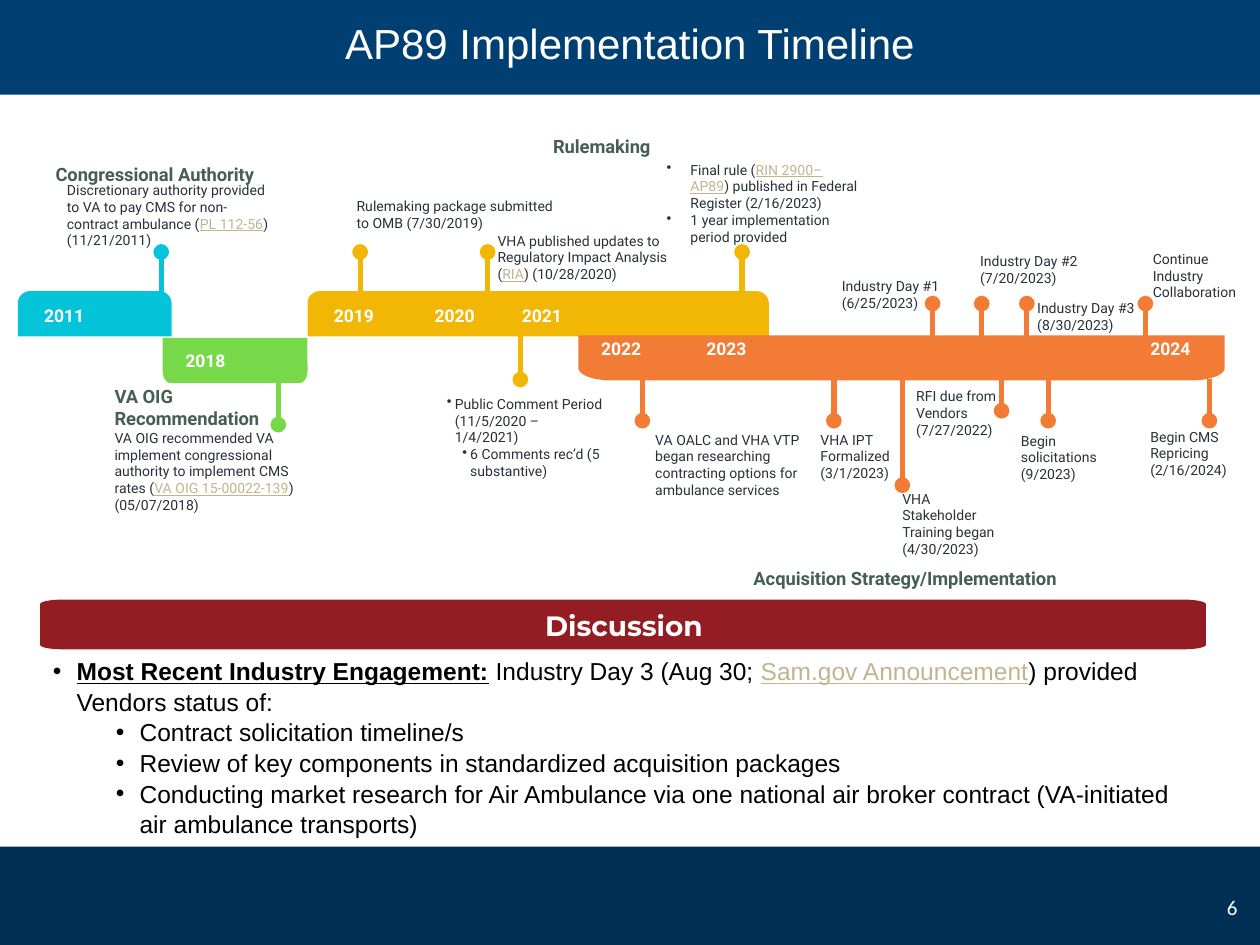
import math

from lxml import etree
from pptx import Presentation
from pptx.dml.color import RGBColor
from pptx.enum.shapes import MSO_CONNECTOR, MSO_SHAPE
from pptx.enum.text import MSO_ANCHOR, MSO_AUTO_SIZE, PP_ALIGN
from pptx.oxml.ns import qn
from pptx.util import Cm, Pt

LINE = MSO_CONNECTOR.STRAIGHT
RECT = MSO_SHAPE.RECTANGLE
ROUND = MSO_SHAPE.ROUND_2_SAME_RECTANGLE
MIDDLE = MSO_ANCHOR.MIDDLE
TOP = MSO_ANCHOR.TOP
GROW = MSO_AUTO_SIZE.SHAPE_TO_FIT_TEXT
FIXED = MSO_AUTO_SIZE.NONE
LEFT, CENTER, RIGHT = PP_ALIGN.LEFT, PP_ALIGN.CENTER, PP_ALIGN.RIGHT

WHITE, INK, PINE, LINK = "FFFFFF", "263238", "455F51", "C2B48F"
CYAN, GREEN, GOLD, ORANGE = "04C4D9", "77D94A", "F2B705", "F27B35"

NOTE = {"name": "Roboto", "size": Pt(8)}
HEAD = {"name": "Roboto", "size": Pt(10.5), "bold": True}
YEAR = {"name": "Roboto", "size": Pt(10), "bold": True}
BANNER = {"name": "Montserrat", "size": Pt(16), "bold": True}
TITLE = {"name": "Arial", "size": Pt(24)}
BODY = {"name": "Arial", "size": Pt(14)}
PAGE = {"name": "Calibri", "size": Pt(12)}

SLIM = {"margin_left": Cm(0.23), "margin_right": Cm(0.23),
        "margin_top": Cm(0.1), "margin_bottom": Cm(0.1)}
INSET = {"margin_left": Cm(0.46), "margin_right": Cm(0.25),
         "margin_top": Cm(0.13), "margin_bottom": Cm(0.13),
         "vertical_anchor": MIDDLE, "word_wrap": True}

PINS = [
    (CYAN, 5.92, 5.08, [3.25]),
    (GREEN, 7.72, 8.56, [5.61]),
    (GOLD, 5.92, 5.08, [7.26, 9.83, 14.96]),
    (GOLD, 6.76, 7.65, [10.49]),
    (ORANGE, 6.81, 6.12, [18.8, 19.79, 20.7, 23.09]),
    (ORANGE, 7.64, 8.48, [12.95, 16.81, 21.13, 24.38]),
    (ORANGE, 7.44, 8.28, [20.19]),
    (ORANGE, 7.62, 9.78, [18.19]),
]

HEADS = [
    ((0.89, 2.97, 4.62, 0.66), "Congressional Authority", 1.5),
    ((10.92, 2.41, 4.62, 0.66), "Rulemaking", 1.5),
    ((14.96, 11.33, 6.63, 0.53), "Acquisition Strategy/Implementation", 1),
]

NOTES = [
    ((1.12, 3.56, 4.62, 1.6),
     ["Discretionary authority provided to VA to pay CMS for non-contract "
      "ambulance (|PL 112-56|)", "(11/21/2011)"]),
    ((6.96, 3.89, 4.62, 0.91),
     ["Rulemaking package submitted to OMB (7/30/2019)"]),
    ((9.8, 4.58, 4.34, 0.71),
     ["VHA published updates to Regulatory Impact Analysis (|RIA|) (10/28/2020)"]),
    ((12.98, 8.59, 3.91, 0.94),
     ["VA OALC and VHA VTP began researching contracting options for "
      "ambulance services"]),
    ((16.31, 8.59, 2.29, 0.69), ["VHA IPT Formalized (3/1/2023)"]),
    ((16.74, 5.49, 2.57, 0.69), ["Industry Day #1", "(6/25/2023)"]),
    ((19.53, 5, 2.49, 0.69), ["Industry Day #2 (7/20/2023)"]),
    ((20.68, 5.94, 2.44, 0.91), ["Industry Day #3 (8/30/2023)"]),
    ((18.24, 7.72, 2.57, 0.69), ["RFI due from Vendors", "(7/27/2022)"]),
    ((20.35, 8.61, 2.44, 0.69), ["Begin solicitations (9/2023)"]),
    ((22.96, 8.53, 2.44, 0.69), ["Begin CMS Repricing (2/16/2024)"]),
    ((17.96, 9.78, 2.39, 1.6), ["VHA Stakeholder Training began (4/30/2023)"]),
    ((23.01, 4.95, 2.29, 0.69), ["Continue Industry Collaboration"]),
]


def paint(fill, hue):
    """Make a fill solid in the given hex colour."""
    fill.solid()
    fill.fore_color.rgb = RGBColor.from_string(hue)


def apply(item, form):
    """Set each named value on the item."""
    for key, val in form.items():
        setattr(item, key, val)


def place(item, box):
    """Move and size an item to a box in centimetres."""
    apply(item, dict(zip(("left", "top", "width", "height"), map(Cm, box))))


def add_run(par, text, form, hue):
    """Add one formatted run to a paragraph."""
    run = par.add_run()
    run.text = text
    apply(run.font, form)
    paint(run.font.fill, hue)


def write(frame, text, form, hue):
    """Add a paragraph in which text between bars looks like a link."""
    par = frame.add_paragraph() if frame.text else frame.paragraphs[0]
    for pos, part in enumerate(text.split("|")):
        if pos % 2:
            add_run(par, part, {**form, "underline": True}, LINK)
        else:
            add_run(par, part, form, hue)
    return par


def bullet(par, left, hang, level=0):
    """Give a paragraph a bullet with a hanging indent."""
    par.level = level
    prop = par._p.get_or_add_pPr()
    prop.set("marL", str(Cm(left)))
    prop.set("indent", str(-Cm(hang)))
    etree.SubElement(prop, qn("a:buChar")).set("char", "•")


def add_tabs(par, stops):
    """Set left tab stops on a paragraph."""
    tabs = etree.SubElement(par._p.get_or_add_pPr(), qn("a:tabLst"))
    for stop in stops:
        tab = etree.SubElement(tabs, qn("a:tab"))
        tab.set("pos", str(Cm(stop)))
        tab.set("algn", "l")


def add_box(slide, box, form):
    """Add a wrapping text box and return its frame."""
    frame = slide.shapes.add_textbox(*map(Cm, box)).text_frame
    apply(frame, {"word_wrap": True, "auto_size": GROW, **form})
    return frame


def finish(shape, hue):
    """Give a shape a plain fill with no line or shadow."""
    shape.shadow.inherit = False
    paint(shape.fill, hue)
    shape.line.fill.background()
    return shape


def add_shape(slide, kind, box, hue):
    """Add a plain preset shape."""
    return finish(slide.shapes.add_shape(kind, *map(Cm, box)), hue)


def add_curve(slide, box, radii, hue, both=False):
    """Add a bar with elliptic corners at the foot, or at both ends."""
    left, top, width, height = box
    wide, high = radii
    dots = []
    for turn in range(4):
        east, south = turn in (0, 3), turn < 2
        if not south and not both:
            dots.append((left + width * east, top))
            continue
        mid = left + (width - wide if east else wide)
        row = top + (height - high if south else high)
        for step in range(9):
            angle = (turn + step / 8) * math.pi / 2
            dots.append((mid + wide * math.cos(angle), row + high * math.sin(angle)))
    dots = [(Cm(x), Cm(y)) for x, y in dots]
    form = slide.shapes.build_freeform(*dots[0])
    form.add_line_segments(dots[1:], close=True)
    return finish(form.convert_to_shape(), hue)


def label(bar, years, stops=(), **form):
    """Write years along a bar at tab stops."""
    apply(bar.text_frame, {**INSET, **form})
    par = write(bar.text_frame, "\t".join(years), YEAR, WHITE)
    par.alignment = LEFT
    if stops:
        add_tabs(par, stops)


def add_pin(slide, x, start, end, hue):
    """Add an upright line that ends in a dot."""
    pin = slide.shapes.add_connector(LINE, Cm(x), Cm(start), Cm(x), Cm(end))
    pin.line.width = Pt(3)
    paint(pin.line.fill, hue)
    etree.SubElement(pin.line._get_or_add_ln(), qn("a:tailEnd")).set("type", "oval")
    etree.SubElement(pin._element.spPr, qn("a:effectLst"))


def add_bars(slide):
    """Add the year bars of the timeline."""
    spans = [(0.36, 3.1, CYAN, ["2011"], ()),
             (6.2, 9.3, GOLD, ["2019", "2020", "2021"], (2.03, 3.79))]
    for left, width, hue, years, stops in spans:
        bar = add_shape(slide, ROUND, (left, 5.87, width, 0.91), hue)
        bar.adjustments[0] = 0.27
        label(bar, years, stops)
    label(add_curve(slide, (3.28, 6.81, 2.92, 0.91), (0.15, 0.25), GREEN), ["2018"])
    bar = add_curve(slide, (11.66, 6.76, 13.03, 0.91), (0.66, 0.25), ORANGE)
    label(bar, ["2022", "2023", "2024"], (2.12, 11.07),
          vertical_anchor=TOP, margin_top=Cm(0.05))


def add_notes(slide):
    """Add the headings and notes around the timeline."""
    for box, text, space in HEADS:
        write(add_box(slide, box, SLIM), text, HEAD, PINE).line_spacing = space
    for box, lines in NOTES:
        frame = add_box(slide, box, SLIM)
        for text in lines:
            write(frame, text, NOTE, INK)
    frame = add_box(slide, (2.08, 7.67, 4.62, 2.84), SLIM)
    write(frame, "VA OIG Recommendation", HEAD, PINE)
    write(frame, "VA OIG recommended VA implement congressional authority to "
          "implement CMS rates (|VA OIG 15-00022-139|)", NOTE, INK)
    write(frame, "(05/07/2018)", NOTE, INK)
    frame = add_box(slide, (13.21, 3.15, 4.37, 1.93), SLIM)
    for text in ("Final rule (|RIN 2900–AP89|) published in Federal Register (2/16/2023)",
                 "1 year implementation period provided"):
        bullet(write(frame, text, NOTE, INK), 0.48, 0.48)
    frame = add_box(slide, (8.46, 7.87, 3.99, 1.6), SLIM)
    for level, text in enumerate(("Public Comment Period (11/5/2020 – 1/4/2021)",
                                  "6 Comments rec’d (5 substantive)")):
        bullet(write(frame, text, NOTE, INK), 0.48 + 0.31 * level, 0.16, level)


def add_talk(slide):
    """Add the discussion banner and fill the list below it."""
    add_curve(slide, (0.81, 12.09, 23.5, 1), (0.43, 0.09), "941D24", both=True)
    write(add_box(slide, (10.74, 12.14, 3.89, 0.94), {}), "Discussion", BANNER, WHITE)
    body = slide.placeholders[1]
    place(body, (0.81, 13.08, 23.52, 3.84))
    frame = body.text_frame
    frame.auto_size = FIXED
    add_run(frame.paragraphs[0], "Most Recent Industry Engagement:",
            {**BODY, "bold": True, "underline": True}, "000000")
    for part, hue, under in ((" Industry Day 3 (Aug 30; ", "000000", False),
                             ("Sam.gov Announcement", LINK, True),
                             (") provided Vendors status of:", "000000", False)):
        add_run(frame.paragraphs[0], part, {**BODY, "underline": under}, hue)
    bullet(frame.paragraphs[0], 0.48, 0.48)
    for text in ("Contract solicitation timeline/s",
                 "Review of key components in standardized acquisition packages",
                 "Conducting market research for Air Ambulance via one national air "
                 "broker contract (VA-initiated air ambulance transports)"):
        bullet(write(frame, text, BODY, "000000"), 1.75, 0.48, 1)
    for par in frame.paragraphs:
        apply(par, {"space_before": Pt(0), "line_spacing": 1.04})


def main():
    """Build the timeline slide and save it."""
    deck = Presentation()
    apply(deck, {"slide_width": Cm(25.4), "slide_height": Cm(19.05)})
    slide = deck.slides.add_slide(deck.slide_layouts[1])
    add_shape(slide, RECT, (0, 17.07, 25.4, 1.98), "002F56")
    title = slide.shapes.title
    place(title, (0, -0.2, 25.4, 2.11))
    paint(title.fill, "003F72")
    apply(title.text_frame, {"vertical_anchor": MIDDLE, "auto_size": FIXED})
    write(title.text_frame, "AP89 Implementation Timeline", TITLE, WHITE).alignment = CENTER
    frame = add_box(slide, (19.28, 17.78, 5.92, 1.02),
                    {"vertical_anchor": MIDDLE, "auto_size": FIXED})
    write(frame, "6", PAGE, WHITE).alignment = RIGHT
    add_talk(slide)
    add_bars(slide)
    for hue, start, end, spots in PINS:
        for x in spots:
            add_pin(slide, x, start, end, hue)
    add_notes(slide)
    deck.save("out.pptx")


if __name__ == "__main__":
    main()
